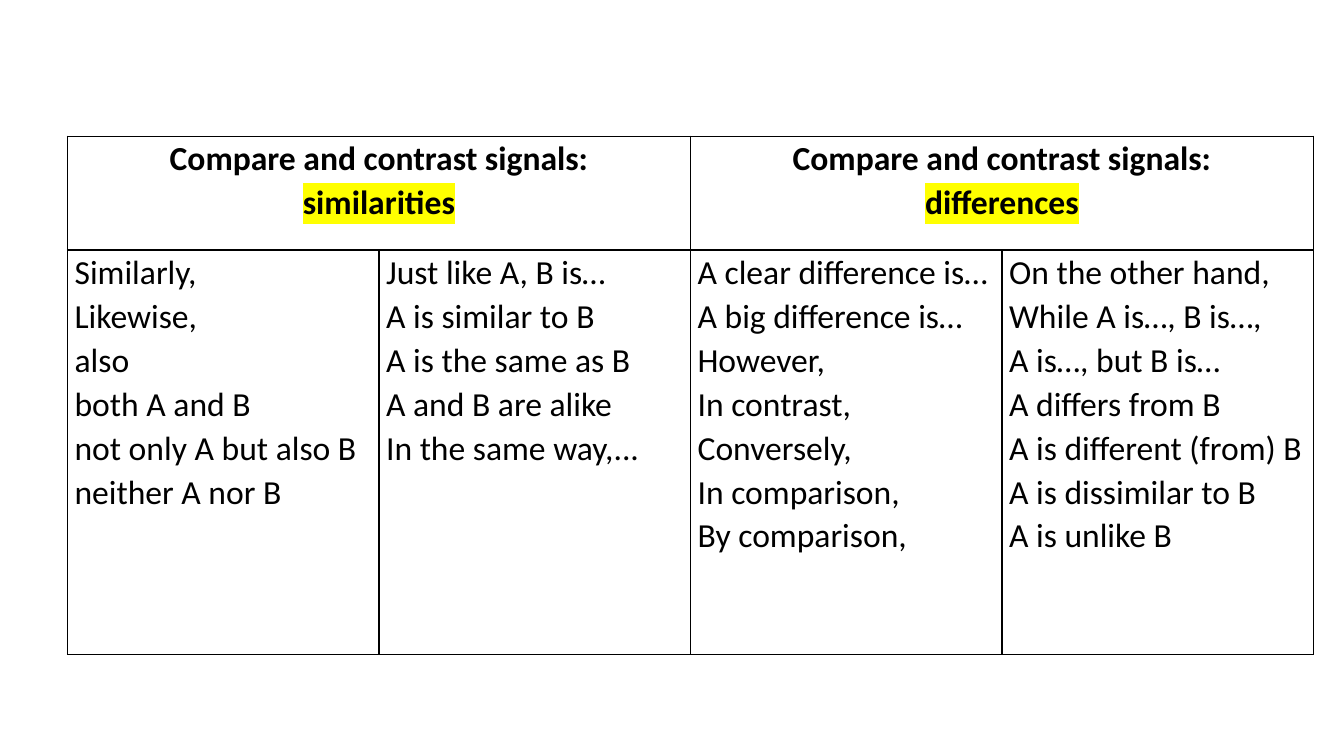
from lxml import etree
from pptx import Presentation
from pptx import util as u
from pptx.dml import color
from pptx.enum import text
from pptx.oxml import ns


def rgb(value):
    return color.RGBColor.from_string(value)


def add_solid(parent, tag, value, **attrs):
    el = etree.SubElement(parent, ns.qn(tag), **attrs)
    if tag != "a:highlight":
        el = etree.SubElement(el, ns.qn("a:solidFill"))
    etree.SubElement(el, ns.qn("a:srgbClr"), val=value)


prs = Presentation()
prs.slide_width = u.Cm(33.87)
prs.slide_height = u.Cm(19.05)
s = prs.slides.add_slide(prs.slide_layouts[6])

headings = ["similarities", "differences"]
signals = [
    ["Similarly,", "Likewise,", "also", "both A and B",
     "not only A but also B", "neither A nor B"],
    ["Just like A, B is…", "A is similar to B", "A is the same as B",
     "A and B are alike", "In the same way,..."],
    ["A clear difference is…", "A big difference is…", "However,",
     "In contrast,", "Conversely,", "In comparison,", "By comparison,"],
    ["On the other hand,", "While A is…, B is…,", "A is…, but B is…",
     "A differs from B", "A is different (from) B",
     "A is dissimilar to B", "A is unlike B"],
]

frame = s.shapes.add_table(2, 4, u.Cm(1.7), u.Cm(3.43), u.Cm(31.4), u.Cm(13.06))
table = frame.table
table.first_row = False
table.horz_banding = False
for column in table.columns:
    column.width = u.Cm(7.85)
for row, height in zip(table.rows, [2.87, 10.19]):
    row.height = u.Cm(height)

for cell in table.iter_cells():
    cell.margin_left = cell.margin_right = u.Cm(0.18)
    cell.margin_top = cell.margin_bottom = 0
    tcPr = cell._tc.get_or_add_tcPr()
    for side in ["a:lnL", "a:lnR", "a:lnT", "a:lnB"]:
        add_solid(tcPr, side, "000000", w="12700")
    cell.fill.background()

blocks = []
for i, heading in enumerate(headings):
    cell = table.cell(0, 2 * i)
    cell.merge(table.cell(0, 2 * i + 1))
    blocks.append((cell, ["Compare and contrast signals:", heading], True))
for i, lines in enumerate(signals):
    blocks.append((table.cell(1, i), lines, False))

for cell, lines, is_heading in blocks:
    tf = cell.text_frame
    for i, line in enumerate(lines):
        p = tf.paragraphs[0] if i == 0 else tf.add_paragraph()
        p.alignment = text.PP_ALIGN.CENTER if is_heading else text.PP_ALIGN.LEFT
        p.line_spacing = 1.07
        r = p.add_run()
        r.text = line
        r.font.size = u.Pt(24)
        r.font.bold = is_heading
        r.font.color.rgb = rgb("000000")
        if line in headings:
            add_solid(r.font._element, "a:highlight", "FFFF00")
        r.font.name = "Calibri"

prs.save("out.pptx")
